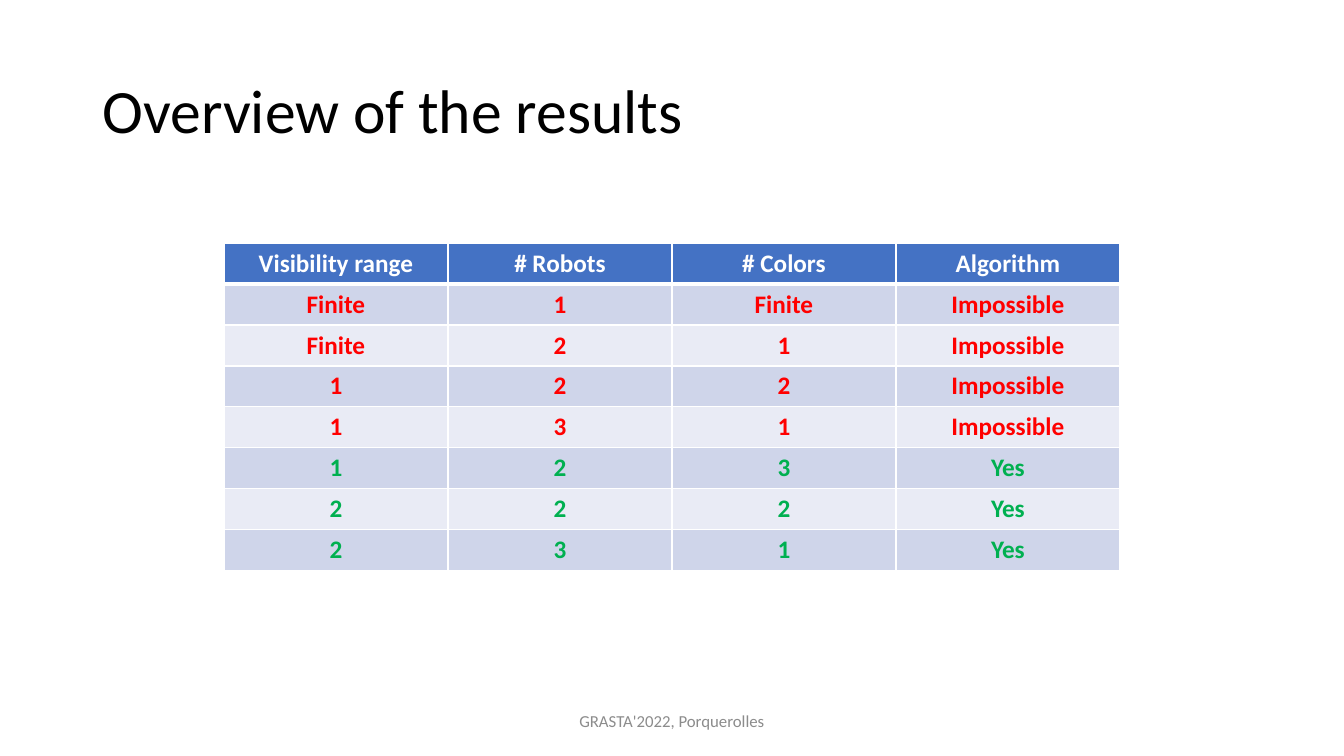
from lxml import etree
from pptx import Presentation
from pptx.dml.color import RGBColor
from pptx.enum.text import MSO_ANCHOR, PP_ALIGN
from pptx.oxml.ns import qn
from pptx.util import Pt

LEFT, CENTER = PP_ALIGN.LEFT, PP_ALIGN.CENTER
MIDDLE = MSO_ANCHOR.MIDDLE
TITLE_ONLY = 5

FONT = "Calibri"
WHITE, BLACK, GREY = "FFFFFF", "000000", "8C8C8C"
HEADER_FILL = "4472C4"
BAND_FILLS = ("CFD5EA", "E9EBF5")
RED, GREEN = "FF0000", "00B050"
ANSWER_COLOURS = {"Impossible": RED, "Yes": GREEN}

HEADINGS = ("Visibility range", "# Robots", "# Colors", "Algorithm")
RESULTS = (
    ("Finite", "1", "Finite", "Impossible"),
    ("Finite", "2", "1", "Impossible"),
    ("1", "2", "2", "Impossible"),
    ("1", "3", "1", "Impossible"),
    ("1", "2", "3", "Yes"),
    ("2", "2", "2", "Yes"),
    ("2", "3", "1", "Yes"),
)
COLUMN_WIDTH, ROW_HEIGHT = 160, 29.2
THIN, THICK = 1, 3


def rgb(colour):
    return RGBColor.from_string(colour)


def place(holder, left, top, width, height):
    box = {"left": left, "top": top, "width": width, "height": height}
    for side, points in box.items():
        setattr(holder, side, Pt(points))


def write(frame, text, size, colour, align=CENTER, bold=False):
    paragraph = frame.paragraphs[0]
    paragraph.alignment = align
    run = paragraph.add_run()
    run.text = text
    font_format = {"name": FONT, "size": Pt(size), "bold": bold}
    for attribute, value in font_format.items():
        setattr(run.font, attribute, value)
    run.font.color.rgb = rgb(colour)
    return paragraph


def add_title(slide, text):
    title = slide.shapes.title
    place(title, 66, 28.8, 828, 104.4)
    title.text_frame.vertical_anchor = MIDDLE
    write(title.text_frame, text, 44, BLACK, LEFT).line_spacing = 0.9


def add_footer(slide, text):
    footer = slide.shapes.add_textbox(Pt(318), Pt(500.5), Pt(324), Pt(28.8))
    footer.text_frame.word_wrap = True
    footer.text_frame.vertical_anchor = MIDDLE
    write(footer.text_frame, text, 12, GREY)


def draw_borders(cell, top, bottom):
    properties = cell._tc.get_or_add_tcPr()
    widths = {"a:lnL": THIN, "a:lnR": THIN, "a:lnT": top, "a:lnB": bottom}
    for edge, width in widths.items():
        line = etree.SubElement(properties, qn(edge), w=str(Pt(width)))
        fill = etree.SubElement(line, qn("a:solidFill"))
        etree.SubElement(fill, qn("a:srgbClr"), val=WHITE)


def fill_row(cells, texts, fill, colour, top=THIN, bottom=THIN):
    for cell, text in zip(cells, texts):
        # Borders come before the fill in the cell properties
        draw_borders(cell, top, bottom)
        cell.fill.solid()
        cell.fill.fore_color.rgb = rgb(fill)
        write(cell.text_frame, text, 18, colour, bold=True)


def add_results_table(slide):
    row_count, column_count = len(RESULTS) + 1, len(HEADINGS)
    results = slide.shapes.add_table(
        row_count, column_count, Pt(160), Pt(173.8),
        Pt(COLUMN_WIDTH * column_count), Pt(ROW_HEIGHT * row_count)).table
    results.horz_banding = False
    for column in results.columns:
        column.width = Pt(COLUMN_WIDTH)
    for row in results.rows:
        row.height = Pt(ROW_HEIGHT)

    # Header row, with a thick line below it
    fill_row(results.rows[0].cells, HEADINGS, HEADER_FILL, WHITE, bottom=THICK)

    # Banded rows, coloured by their answer
    for index, texts in enumerate(RESULTS):
        fill_row(results.rows[index + 1].cells, texts, BAND_FILLS[index % 2],
                 ANSWER_COLOURS[texts[-1]], top=THIN if index else THICK)


def main():
    deck = Presentation()
    deck.slide_width, deck.slide_height = Pt(960), Pt(540)
    slide = deck.slides.add_slide(deck.slide_layouts[TITLE_ONLY])
    add_title(slide, "Overview of the results")
    add_footer(slide, "GRASTA'2022, Porquerolles")
    add_results_table(slide)
    deck.save("out.pptx")


if __name__ == "__main__":
    main()
